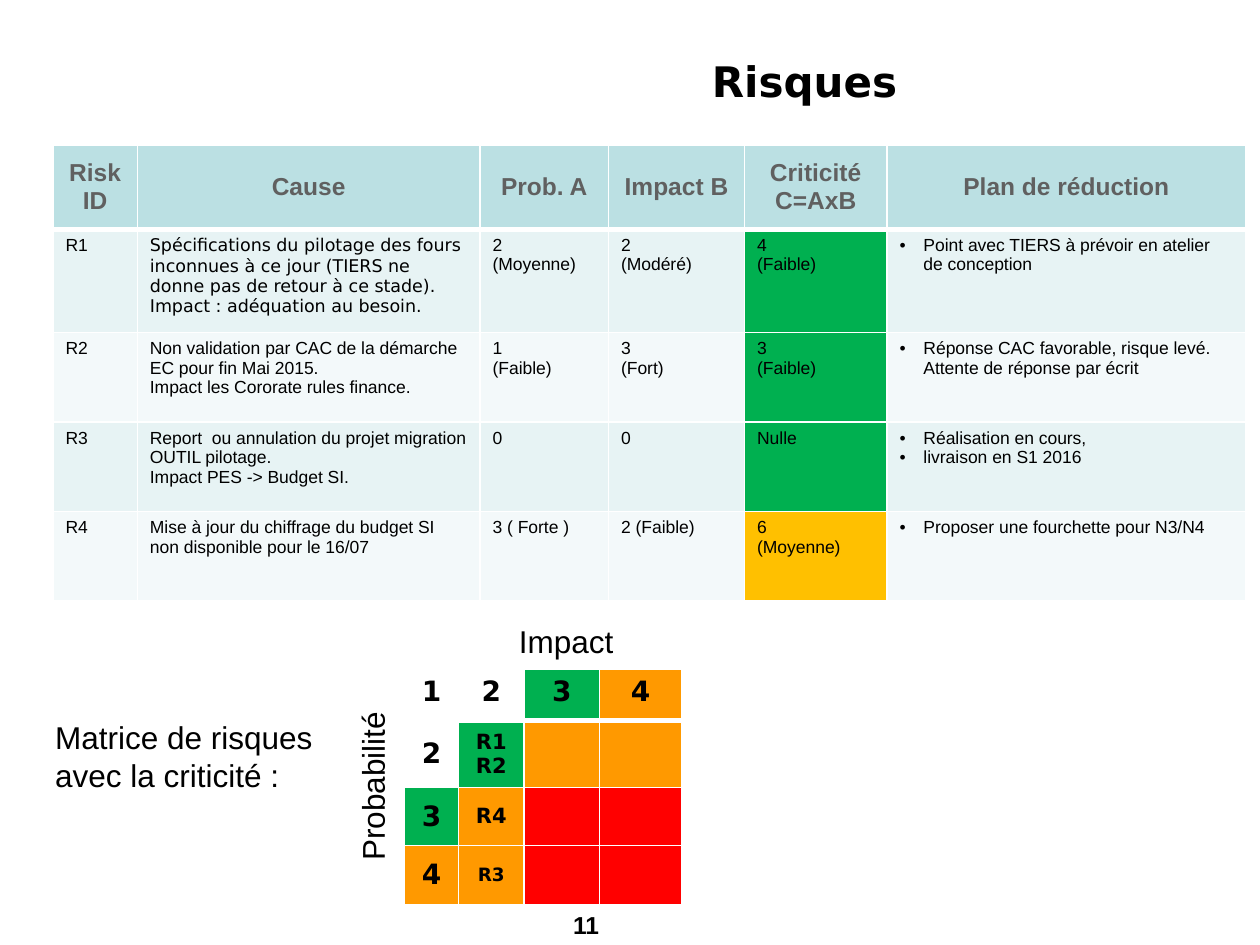
from pptx import Presentation
from pptx.dml.color import RGBColor
from pptx.enum.text import MSO_ANCHOR, PP_ALIGN
from pptx.oxml.ns import qn
from pptx.util import Inches, Pt
from lxml import etree

CENTER, LEFT = PP_ALIGN.CENTER, PP_ALIGN.LEFT
TOP, MIDDLE = MSO_ANCHOR.TOP, MSO_ANCHOR.MIDDLE
SANS, DEJAVU = "Arial", "DejaVu Sans"
COLORS = {
    "black": "000000", "white": "FFFFFF", "grey": "606060",
    "header": "BBE0E3", "odd": "E7F3F4", "even": "F3F9FA",
    "green": "00B050", "amber": "FFC000", "orange": "FF9900", "red": "FF0000",
}

RISK_COLS = [0.67, 2.72, 1.02, 1.08, 1.13, 2.85]
RISK_ROWS = [0.67, 0.82, 0.71, 0.71, 0.71]
RISK_HEAD = ["Risk ID", "Cause", "Prob. A", "Impact B", "Criticité\nC=AxB",
             "Plan de réduction"]
RISKS = [
    ["R1", "Spécifications du pilotage des fours inconnues à ce jour (TIERS ne "
     "donne pas de retour à ce stade).\nImpact : adéquation au besoin.",
     "2\n(Moyenne)", "2\n(Modéré)", "4\n(Faible)",
     "Point avec TIERS à prévoir en atelier de conception"],
    ["R2", "Non validation par CAC de la démarche EC pour fin Mai 2015.\n"
     "Impact les Cororate rules finance.",
     "1\n(Faible)", "3\n(Fort)", "3\n(Faible)",
     "Réponse CAC favorable, risque levé. Attente de réponse par écrit"],
    ["R3", "Report  ou annulation du projet migration OUTIL pilotage.\n"
     "Impact PES -> Budget SI.",
     "0", "0", "Nulle", "Réalisation en cours,\nlivraison en S1 2016"],
    ["R4", "Mise à jour du chiffrage du budget SI non disponible pour le 16/07",
     "3 ( Forte )", "2 (Faible)", "6\n(Moyenne)",
     "Proposer une fourchette pour N3/N4"],
]
CRITICALITY = ["green", "green", "green", "amber"]
CRITICALITY_COL, PLAN_COL = 4, 5

MATRIX_COLS = [0.43, 0.52, 0.6, 0.65]
MATRIX_ROWS = [0.41, 0.53, 0.46, 0.47]
MATRIX = [["1", "2", "3", "4"], ["2", "R1\nR2", "", ""],
          ["3", "R4", "", ""], ["4", "R3", "", ""]]
MATRIX_FILLS = [["white", "white", "green", "orange"],
                ["white", "green", "orange", "orange"],
                ["green", "orange", "red", "red"],
                ["orange", "orange", "red", "red"]]
MATRIX_SIZES = {"R1\nR2": 12, "R4": 12, "R3": 10.5}


def rgb(name):
    return RGBColor.from_string(COLORS[name])


def write(tf, text, size=10, font=SANS, color="black", bold=False, align=LEFT,
          bullet=False):
    """Write one paragraph for each line of text."""
    for i, line in enumerate(text.split("\n")):
        p = tf.paragraphs[0] if i == 0 else tf.add_paragraph()
        p.alignment = align
        if bullet:
            pPr = p._p.get_or_add_pPr()
            pPr.set("marL", str(Inches(0.19)))
            pPr.set("indent", str(Inches(-0.19)))
            etree.SubElement(pPr, qn("a:buFont")).set("typeface", SANS)
            etree.SubElement(pPr, qn("a:buChar")).set("char", "•")
        r = p.add_run()
        r.text = line
        r.font.size, r.font.name, r.font.bold = Pt(size), font, bold
        r.font.color.rgb = rgb(color)


def style_cell(cell, fill, row):
    """White borders, thicker under the header row, then the fill."""
    tcPr = cell._tc.get_or_add_tcPr()
    widths = {"L": 1, "R": 1, "T": 3 if row == 1 else 1, "B": 3 if row == 0 else 1}
    for side, width in widths.items():
        ln = etree.SubElement(tcPr, qn(f"a:ln{side}"), w=str(Pt(width)))
        solid = etree.SubElement(ln, qn("a:solidFill"))
        etree.SubElement(solid, qn("a:srgbClr")).set("val", COLORS["white"])
    cell.fill.solid()
    cell.fill.fore_color.rgb = rgb(fill)


def add_grid(s, left, top, cols, rows):
    shape = s.shapes.add_table(len(rows), len(cols), Inches(left), Inches(top),
                               Inches(sum(cols)), Inches(sum(rows)))
    table = shape.table
    for col, width in zip(table.columns, cols):
        col.width = Inches(width)
    for row, height in zip(table.rows, rows):
        row.height = Inches(height)
    return table


def add_label(s, text, left, top, width, height, rotation=0, **fmt):
    sp = s.shapes.add_textbox(Inches(left), Inches(top), Inches(width), Inches(height))
    sp.rotation = rotation
    sp.text_frame.word_wrap = False
    write(sp.text_frame, text, **fmt)


def add_title(s, text, left, top, width, height):
    sp = s.shapes.title
    sp.left, sp.top = Inches(left), Inches(top)
    sp.width, sp.height = Inches(width), Inches(height)
    sp.text_frame.vertical_anchor = MIDDLE
    write(sp.text_frame, text, size=24, font=DEJAVU, bold=True, align=CENTER)


def add_risk_table(s, left, top):
    table = add_grid(s, left, top, RISK_COLS, RISK_ROWS)
    for c, text in enumerate(RISK_HEAD):
        cell = table.cell(0, c)
        style_cell(cell, "header", 0)
        cell.vertical_anchor = MIDDLE
        write(cell.text_frame, text, size=14, color="grey", bold=True, align=CENTER)
    for r, (risk, level) in enumerate(zip(RISKS, CRITICALITY), start=1):
        band = "odd" if r % 2 else "even"
        for c, text in enumerate(risk):
            cell = table.cell(r, c)
            style_cell(cell, level if c == CRITICALITY_COL else band, r)
            write(cell.text_frame, text, bullet=c == PLAN_COL,
                  font=DEJAVU if (r, c) == (1, 1) else SANS)


def add_matrix(s, left, top):
    """Probability by impact grid with its two axis labels and caption."""
    table = add_grid(s, left, top, MATRIX_COLS, MATRIX_ROWS)
    for r, (texts, fills) in enumerate(zip(MATRIX, MATRIX_FILLS)):
        for c, (text, fill) in enumerate(zip(texts, fills)):
            cell = table.cell(r, c)
            style_cell(cell, fill, r)
            cell.vertical_anchor = MIDDLE if r else TOP
            if text:
                write(cell.text_frame, text, size=MATRIX_SIZES.get(text, 16),
                      font=DEJAVU, bold=True, align=CENTER)
    add_label(s, "Matrice de risques\navec la criticité :", left - 2.87, top + 0.34,
              2.33, 0.71, size=18)
    add_label(s, "Impact", left + 0.81, top - 0.42, 0.96, 0.4, size=18)
    add_label(s, "Probabilité", left - 0.95, top + 0.73, 1.39, 0.4, rotation=270,
              size=18, align=CENTER)


def main():
    prs = Presentation()
    prs.slide_width, prs.slide_height = Inches(10), Inches(7.5)
    s = prs.slides.add_slide(prs.slide_layouts[5])
    add_title(s, "Risques", 2.95, 0.36, 6.87, 0.56)
    add_risk_table(s, 0.42, 1.15)
    add_matrix(s, 3.21, 5.31)
    add_label(s, "11", 4.45, 7.17, 0.75, 0.33, size=14, bold=True)
    prs.save("out.pptx")


if __name__ == "__main__":
    main()
